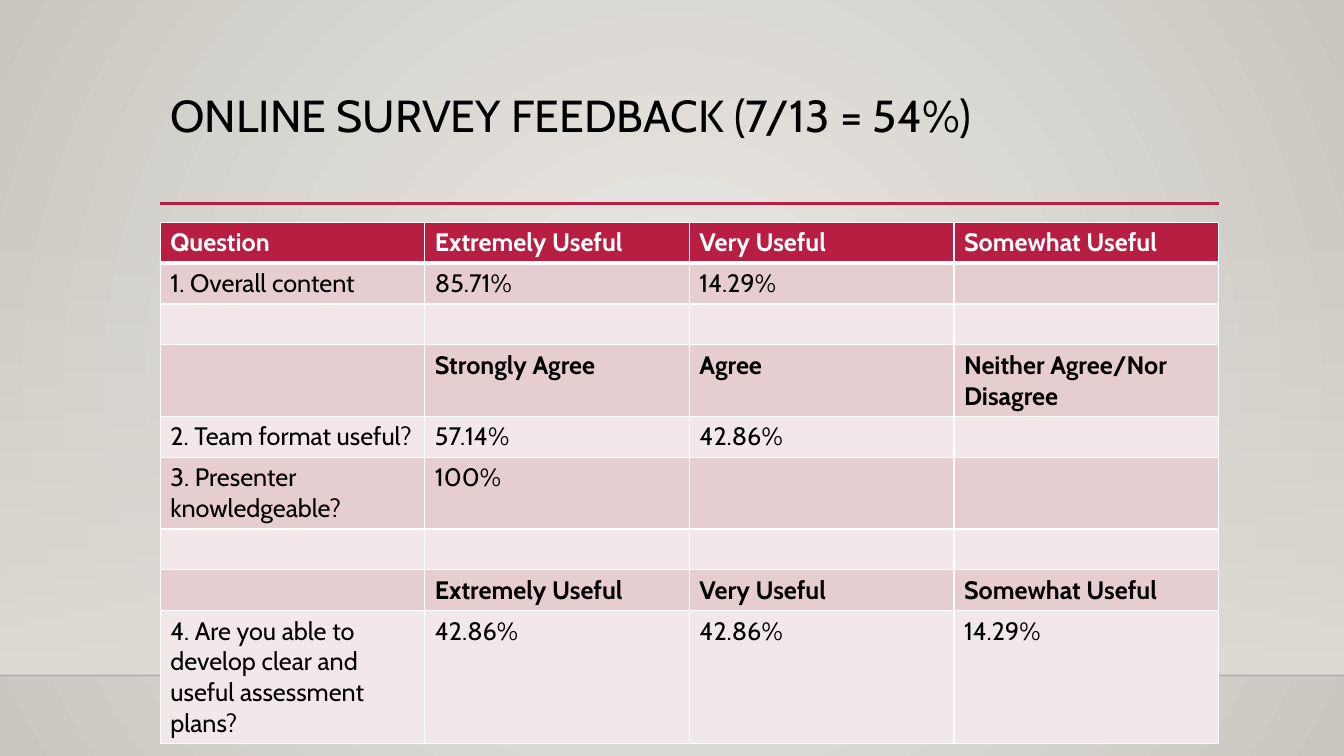
import pptx
import pptx.util
import pptx.dml.color
import pptx.enum.shapes
import pptx.enum.text
import lxml.etree

Cm = pptx.util.Cm
Pt = pptx.util.Pt
RGB = pptx.dml.color.RGBColor.from_string
A = "{http://schemas.openxmlformats.org/drawingml/2006/main}"

COLORS = {
    "black": "000000",
    "white": "FFFFFF",
    "crimson": "B71E42",
    "rose": "E6CDCF",
    "blush": "F3E8E9",
    "wall": "DFDBD5",
    "glow": "ECEAE7",
    "edge": "CAC7C1",
}


def write(frame, text, size=18, color="black", bold=False, spacing=None):
    paragraph = frame.paragraphs[0]
    paragraph.alignment = pptx.enum.text.PP_ALIGN.LEFT
    paragraph.line_spacing = spacing
    run = paragraph.add_run()
    run.text = text
    run.font.name = "Cabin"
    run.font.size = Pt(size)
    run.font.bold = bold
    run.font.color.rgb = RGB(COLORS[color])


def set_stops(fill, first, last):
    fill.gradient()
    for stop, position, color in zip(fill.gradient_stops, (0, 1), (first, last)):
        stop.position = position
        stop.color.rgb = RGB(COLORS[color])


deck = pptx.Presentation()
deck.slide_width = Cm(33.87)
deck.slide_height = Cm(19.05)
slide = deck.slides.add_slide(deck.slide_layouts[5])

set_stops(slide.background.fill, "glow", "edge")
backdrop = slide.element.xpath(".//p:bg//a:gradFill")[0]
backdrop.remove(backdrop.find(A + "lin"))
circle = lxml.etree.SubElement(backdrop, A + "path", {"path": "circle"})
lxml.etree.SubElement(circle, A + "fillToRect", dict.fromkeys("ltrb", "50000"))

wall = slide.shapes.add_shape(
    pptx.enum.shapes.MSO_SHAPE.RECTANGLE, Cm(0), Cm(5.61), deck.slide_width, Cm(11.41)
)
wall.shadow.inherit = False
wall.line.fill.background()
set_stops(wall.fill, "wall", "wall")
wall.fill.gradient_angle = 270
wall_top = wall.element.xpath(".//a:gs/a:srgbClr")[0]
lxml.etree.SubElement(wall_top, A + "alpha", val="0")

for left, right, y, color, width, opacity in (
    (0, 33.87, 17.02, "black", 1, 20),
    (4.04, 30.73, 5.13, "crimson", 2.5, 100),
):
    rule = slide.shapes.add_connector(
        pptx.enum.shapes.MSO_CONNECTOR.STRAIGHT, Cm(left), Cm(y), Cm(right), Cm(y)
    )
    rule.line.width = Pt(width)
    rule.line.color.rgb = RGB(COLORS[color])
    ink = rule.element.xpath(".//a:ln//a:srgbClr")[0]
    lxml.etree.SubElement(ink, A + "alpha", val=str(opacity * 1000))
    lxml.etree.SubElement(rule.element.spPr, A + "effectLst")

title = slide.shapes.title
title.left, title.top, title.width, title.height = Cm(4.04), Cm(2.24), Cm(26.67), Cm(2.92)
title.text_frame.word_wrap = True
title.text_frame.vertical_anchor = pptx.enum.text.MSO_ANCHOR.TOP
write(title.text_frame, "ONLINE SURVEY FEEDBACK (7/13 = 54%)", size=32, spacing=0.9)

usefulness = ("Extremely Useful", "Very Useful", "Somewhat Useful")
answers = [
    ("Question", *usefulness),
    ("1. Overall content", "85.71%", "14.29%", ""),
    ("", "", "", ""),
    ("", "Strongly Agree", "Agree", "Neither Agree/Nor Disagree"),
    ("2. Team format useful?", "57.14%", "42.86%", ""),
    ("3. Presenter knowledgeable?", "100%", "", ""),
    ("", "", "", ""),
    ("", *usefulness),
    ("4. Are you able to develop clear and useful assessment plans?",
     "42.86%", "42.86%", "14.29%"),
]
scale_rows = (0, 3, 7)
row_height = Cm(1.03)

feedback = slide.shapes.add_table(
    len(answers), 4, Cm(4.04), Cm(5.6), Cm(26.67), row_height * len(answers)
).table
for row_index, row in enumerate(answers):
    feedback.rows[row_index].height = row_height
    for column_index, answer in enumerate(row):
        cell = feedback.cell(row_index, column_index)
        properties = cell._tc.get_or_add_tcPr()
        for side in "LRTB":
            under_header = (row_index, side) in ((0, "B"), (1, "T"))
            border = lxml.etree.SubElement(
                properties, A + "ln" + side, w=str(Pt(3 if under_header else 1))
            )
            stroke = lxml.etree.SubElement(border, A + "solidFill")
            lxml.etree.SubElement(stroke, A + "srgbClr", val=COLORS["white"])
        shade = "crimson" if row_index == 0 else ("blush", "rose")[row_index % 2]
        cell.fill.solid()
        cell.fill.fore_color.rgb = RGB(COLORS[shade])
        if answer:
            write(
                cell.text_frame,
                answer,
                color="white" if row_index == 0 else "black",
                bold=row_index in scale_rows,
            )

deck.save("out.pptx")
